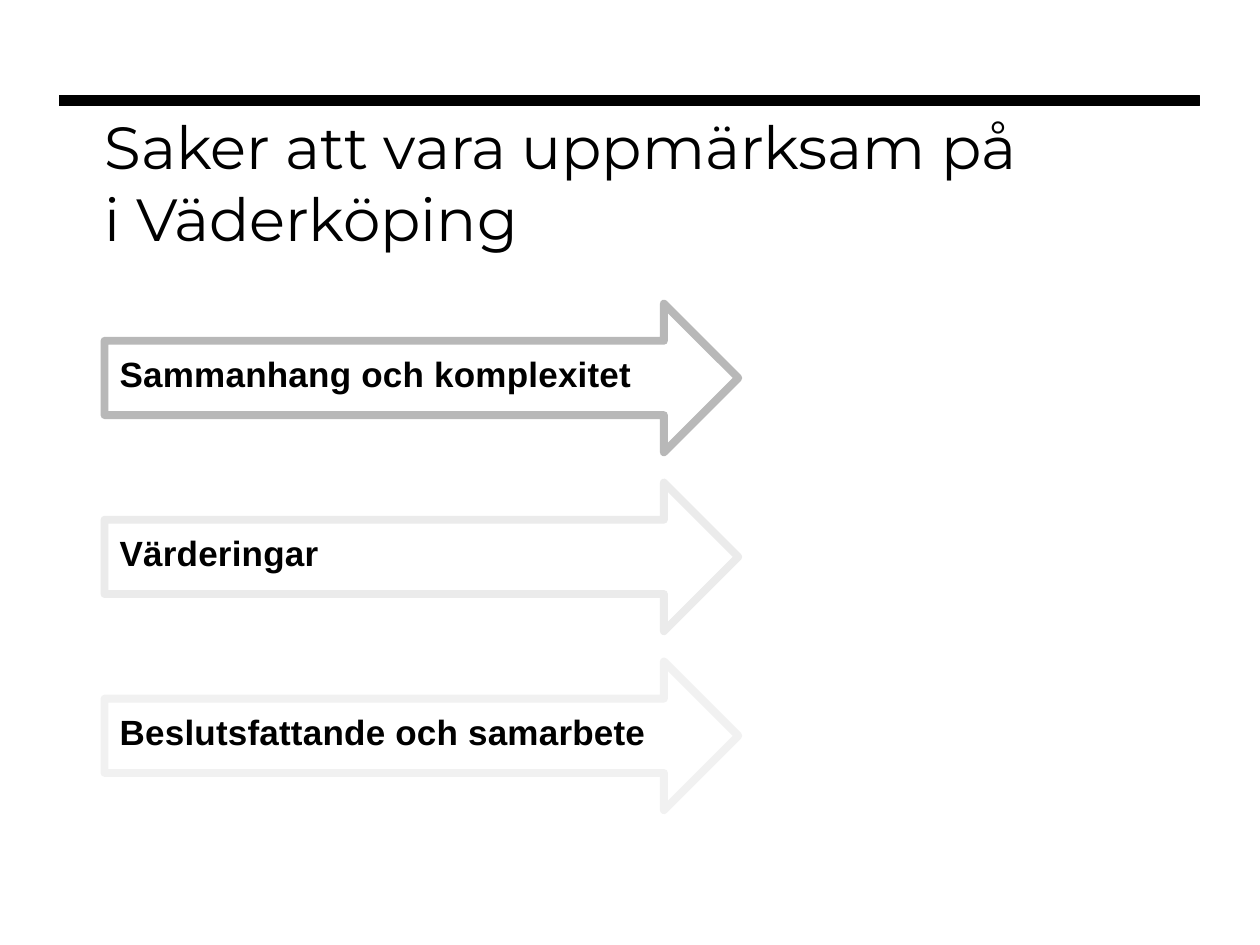
from dataclasses import dataclass

from pptx import Presentation
from pptx.dml.color import RGBColor
from pptx.enum.shapes import MSO_SHAPE as Preset
from pptx.enum.text import MSO_ANCHOR as Anchor, MSO_AUTO_SIZE as AutoSize, PP_ALIGN as Align
from pptx.util import Inches, Pt


@dataclass(frozen=True)
class Theme:
    ink: str = "000000"
    paper: str = "FFFFFF"
    strong_arrow: str = "B8B8B8"
    light_arrow: str = "EBEBEB"
    faint_arrow: str = "F1F1F1"
    title_font: str = "Montserrat"
    label_font: str = "Arial"
    title_size: int = 34
    label_size: int = 20
    label_spacing: int = 10
    rule_width: float = 0.75
    arrow_width: float = 4.5


THEME = Theme()
LEFT = 0.83
FIRST_ARROW_TOP = 2.41
ARROW_PITCH = 1.42


def place(shape, left, top, width, height):
    shape.left, shape.top = Inches(left), Inches(top)
    shape.width, shape.height = Inches(width), Inches(height)


def prepare_frame(shape, anchor):
    frame = shape.text_frame
    frame.margin_left = frame.margin_right = 0
    frame.margin_top = frame.margin_bottom = 0
    frame.word_wrap = True
    frame.auto_size = AutoSize.NONE
    frame.vertical_anchor = anchor
    paragraph = frame.paragraphs[0]
    paragraph.alignment = Align.LEFT
    return paragraph


def add_run(paragraph, text, font_name, size, bold=False):
    run = paragraph.add_run()
    run.text = text
    run.font.name = font_name
    run.font.size = Pt(size)
    run.font.bold = bold
    run.font.color.rgb = RGBColor.from_string(THEME.ink)
    return run


def add_outlined_shape(shapes, preset, box, fill, line, line_width):
    shape = shapes.add_shape(preset, *map(Inches, box))
    shape.shadow.inherit = False
    shape.fill.solid()
    shape.fill.fore_color.rgb = RGBColor.from_string(fill)
    shape.line.color.rgb = RGBColor.from_string(line)
    shape.line.width = Pt(line_width)


def set_title(slide, lines):
    title = slide.shapes.title
    place(title, LEFT, 1.12, 8.35, 0.89)
    paragraph = prepare_frame(title, Anchor.BOTTOM)
    for index, line in enumerate(lines):
        if index:
            paragraph.add_line_break()
        add_run(paragraph, line, THEME.title_font, THEME.title_size)


def add_labelled_arrow(slide, top, text, color):
    group = slide.shapes.add_group_shape()
    add_outlined_shape(group.shapes, Preset.RIGHT_ARROW, (LEFT, top, 5.03, 1.18),
                       THEME.paper, color, THEME.arrow_width)
    label = group.shapes.add_textbox(Inches(LEFT + 0.12), Inches(top + 0.39),
                                     Inches(4.4), Inches(0.39))
    paragraph = prepare_frame(label, Anchor.TOP)
    run = add_run(paragraph, text, THEME.label_font, THEME.label_size, bold=True)
    run._r.get_or_add_rPr().set("spc", str(THEME.label_spacing))


def main():
    presentation = Presentation()
    presentation.slide_width, presentation.slide_height = Inches(10), Inches(7.5)
    slide = presentation.slides.add_slide(presentation.slide_layouts.get_by_name("Title Only"))

    add_outlined_shape(slide.shapes, Preset.RECTANGLE, (0.47, 0.76, 9.05, 0.08),
                       THEME.ink, THEME.ink, THEME.rule_width)
    set_title(slide, ["Saker att vara uppmärksam på", "i Väderköping"])

    arrows = [
        ("Sammanhang och komplexitet", THEME.strong_arrow),
        ("Värderingar", THEME.light_arrow),
        ("Beslutsfattande och samarbete", THEME.faint_arrow),
    ]
    for index, (text, color) in enumerate(arrows):
        add_labelled_arrow(slide, FIRST_ARROW_TOP + index * ARROW_PITCH, text, color)

    presentation.save("out.pptx")


if __name__ == "__main__":
    main()
